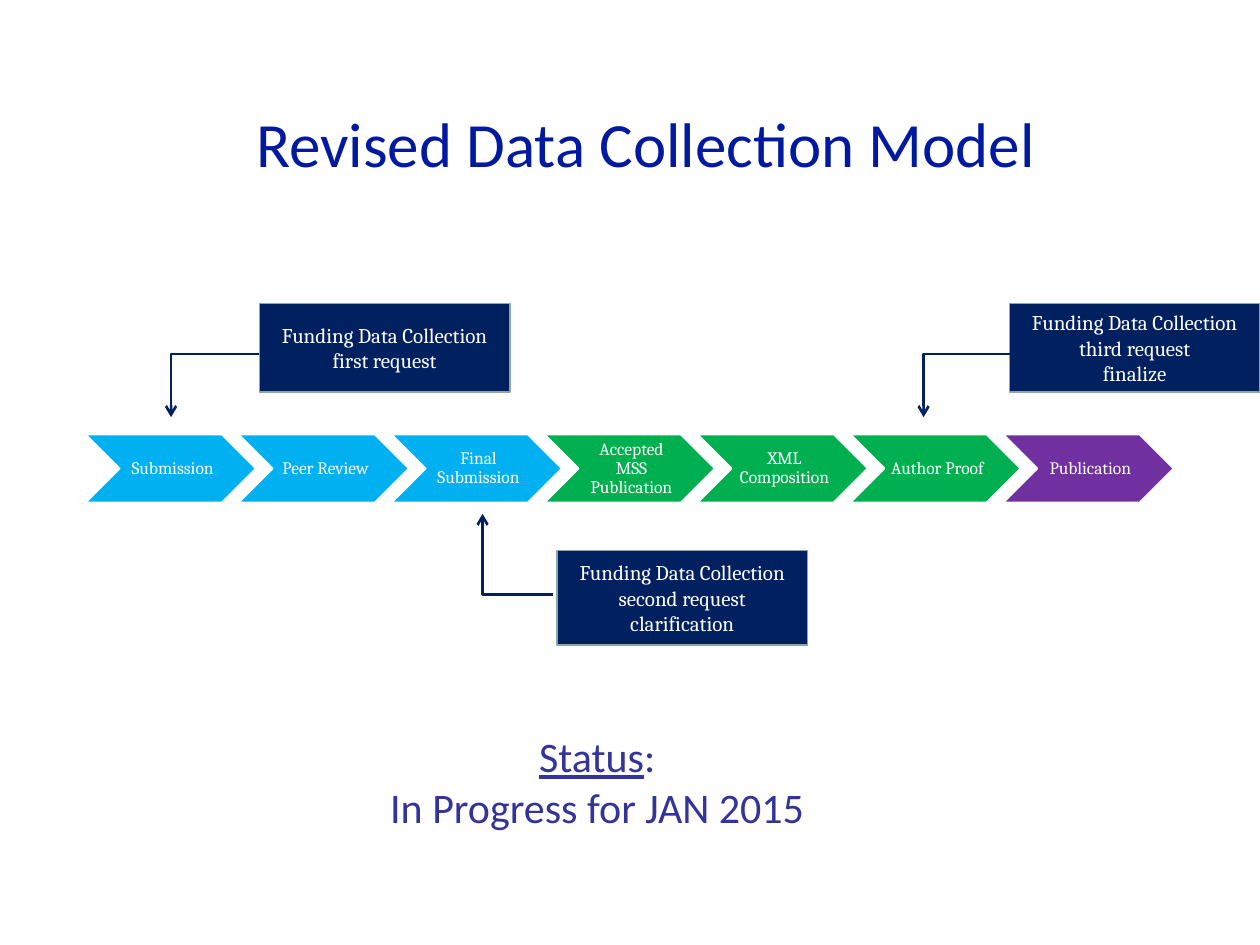
from dataclasses import dataclass

from lxml.etree import SubElement
from pptx import Presentation
from pptx.dml.color import RGBColor
from pptx.enum.shapes import MSO_CONNECTOR, MSO_SHAPE
from pptx.enum.text import MSO_ANCHOR, MSO_AUTO_SIZE, PP_ALIGN
from pptx.oxml.ns import qn
from pptx.util import Cm, Pt


@dataclass(frozen=True)
class Theme:
    title: str = "0019A1"
    status: str = "333399"
    navy: str = "002060"
    edge: str = "8AA6A8"
    white: str = "FFFFFF"
    blue: str = "00B0F0"
    green: str = "00B050"
    purple: str = "7030A0"
    sans: str = "Calibri"
    serif: str = "Cambria"
    title_size: int = 36
    status_size: int = 24
    note_size: int = 12
    step_size: int = 10


@dataclass(frozen=True)
class Box:
    left: float
    top: float
    width: float
    height: float

    def emu(self) -> tuple:
        return Cm(self.left), Cm(self.top), Cm(self.width), Cm(self.height)


@dataclass(frozen=True)
class Style:
    font: str
    size: int
    color: str


@dataclass(frozen=True)
class Run:
    text: str
    under: bool = False


@dataclass(frozen=True)
class Step:
    text: str
    fill: str


@dataclass(frozen=True)
class Note:
    box: Box
    lines: tuple
    start: tuple
    end: tuple


THEME = Theme()
TITLE = Style(THEME.sans, THEME.title_size, THEME.title)
STATUS = Style(THEME.sans, THEME.status_size, THEME.status)
NOTE = Style(THEME.serif, THEME.note_size, THEME.white)
STEP = Style(THEME.serif, THEME.step_size, THEME.white)

FIRST = Box(1.73, 8.76, 3.43, 1.37)
LAST = 20.23
STEPS = (
    Step("Submission", THEME.blue),
    Step("Peer Review", THEME.blue),
    Step("Final Submission", THEME.blue),
    Step("Accepted MSS Publication", THEME.green),
    Step("XML Composition", THEME.green),
    Step("Author Proof", THEME.green),
    Step("Publication", THEME.purple),
)
PITCH = (LAST - FIRST.left) / (len(STEPS) - 1)
NOTES = (
    Note(Box(11.23, 11.1, 5.05, 1.9),
         ("Funding Data Collection second request clarification",),
         (11.15, 11.99), (9.73, 10.36)),
    Note(Box(5.23, 6.12, 5.05, 1.78),
         ("Funding Data Collection first request",),
         (5.23, 7.14), (3.45, 8.41)),
    Note(Box(20.35, 6.12, 5.05, 1.78),
         ("Funding Data Collection third request", "finalize"),
         (20.4, 7.14), (18.62, 8.41)),
)


def write(frame, lines: tuple, style: Style, spacing: float = 1.0) -> None:
    frame.word_wrap = True
    for index, runs in enumerate(lines):
        para = frame.paragraphs[0] if index == 0 else frame.add_paragraph()
        para.alignment = PP_ALIGN.CENTER
        para.line_spacing = spacing
        for item in runs:
            run = para.add_run()
            run.text = item.text
            run.font.name = style.font
            run.font.size = Pt(style.size)
            run.font.color.rgb = RGBColor.from_string(style.color)
            run.font.underline = item.under


def add_text(slide, box: Box, lines: tuple, style: Style):
    frame = slide.shapes.add_textbox(*box.emu()).text_frame
    write(frame, lines, style)
    return frame


def add_block(slide, kind, box: Box, fill: str, edge: str):
    shape = slide.shapes.add_shape(kind, *box.emu())
    shape.shadow.inherit = False
    shape.fill.solid()
    shape.fill.fore_color.rgb = RGBColor.from_string(fill)
    shape.line.color.rgb = RGBColor.from_string(edge)
    shape.line.width = Pt(1)
    frame = shape.text_frame
    frame.vertical_anchor = MSO_ANCHOR.MIDDLE
    return frame


def add_step(slide, index: int, step: Step) -> None:
    box = Box(FIRST.left + index * PITCH, FIRST.top, FIRST.width, FIRST.height)
    frame = add_block(slide, MSO_SHAPE.CHEVRON, box, step.fill, THEME.white)
    frame.margin_left = Cm(0.1)
    frame.margin_right = frame.margin_top = frame.margin_bottom = Cm(0.03)
    write(frame, ((Run(step.text),),), STEP, 0.9)


def add_arrow(slide, start: tuple, end: tuple) -> None:
    points = (Cm(value) for value in start + end)
    arrow = slide.shapes.add_connector(MSO_CONNECTOR.ELBOW, *points)
    arrow.line.color.rgb = RGBColor.from_string(THEME.navy)
    arrow.line.width = Pt(1.5)
    props = arrow.element.spPr
    props.find(qn("a:prstGeom")).set("prst", "bentConnector2")
    SubElement(props.find(qn("a:ln")), qn("a:tailEnd"), type="arrow")
    SubElement(props, qn("a:effectLst"))


def add_note(slide, note: Note) -> None:
    frame = add_block(slide, MSO_SHAPE.RECTANGLE, note.box, THEME.navy, THEME.edge)
    write(frame, tuple((Run(line),) for line in note.lines), NOTE)
    add_arrow(slide, note.start, note.end)


def main() -> None:
    deck = Presentation()
    deck.slide_width, deck.slide_height = Cm(25.4), Cm(19.05)
    slide = deck.slides.add_slide(deck.slide_layouts[6])

    title = add_text(slide, Box(3.81, 1.27, 18.42, 3.18),
                     ((Run("Revised Data Collection Model"),),), TITLE)
    title.vertical_anchor = MSO_ANCHOR.MIDDLE
    for index, step in enumerate(STEPS):
        add_step(slide, index, step)
    for note in NOTES:
        add_note(slide, note)
    status = add_text(slide, Box(7.19, 14.61, 9.7, 2.31),
                      ((Run("Status", True), Run(":")),
                       (Run("In Progress for JAN 2015"),)), STATUS)
    status.auto_size = MSO_AUTO_SIZE.SHAPE_TO_FIT_TEXT
    deck.save("out.pptx")


if __name__ == "__main__":
    main()
